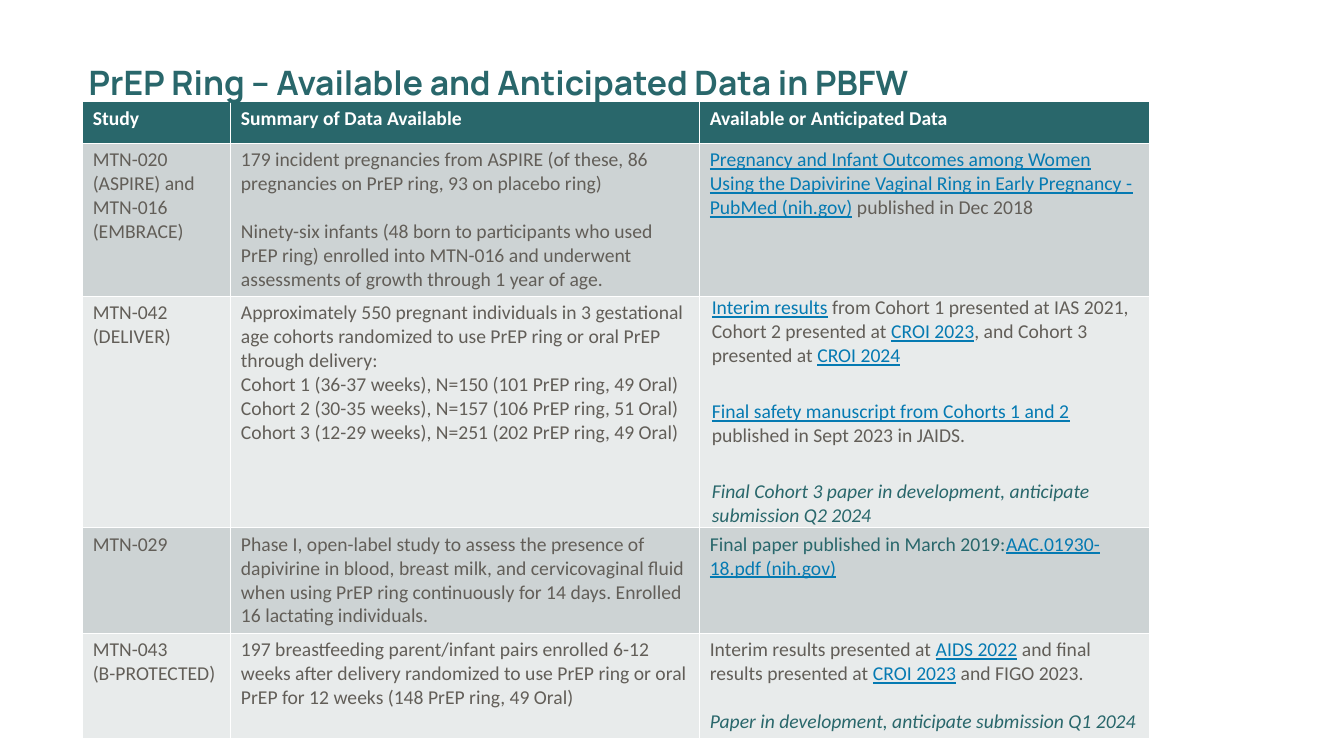
"""Build the slide on PrEP ring data in pregnant and breastfeeding women."""
import pptx
import pptx.util
import pptx.dml.color
import pptx.enum.text

TITLE = "PrEP Ring – Available and Anticipated Data in PBFW"
TEAL, GREY, BLUE, WHITE = "29676B", "625E58", "057AB2", "FFFFFF"
BANDS = ["CDD3D4", "E8EBEB"]
LINK = {"color": BLUE, "under": True}
NOTE = {"color": TEAL, "slant": True}
GAP, WIDE = 17, 23
WIDTH, HEIGHT = 13.33, 7.5
LEFT, TOP = 0.82, 1.01
COLS = [1.47, 4.65, 4.46]
ROWS = [0.41, 1.5, 2.27, 1.03, 1.03]

HEAD = ["Study", "Summary of Data Available", "Available or Anticipated Data"]

# Each cell is a list of paragraphs: space before, then its runs.
BODY = [
    [
        [(0, "MTN-020 (ASPIRE) and MTN-016 (EMBRACE)")],
        [(0, "179 incident pregnancies from ASPIRE (of these, 86 pregnancies "
             "on PrEP ring, 93 on placebo ring)"),
         (GAP, "Ninety-six infants (48 born to participants who used PrEP ring) "
               "enrolled into MTN-016 and underwent assessments of growth "
               "through 1 year of age.")],
        [(0, ("Pregnancy and Infant Outcomes among Women Using the Dapivirine "
              "Vaginal Ring in Early Pregnancy - PubMed (nih.gov)", LINK),
          " published in Dec 2018")],
    ],
    [
        [(0, "MTN-042 (DELIVER)")],
        [(0, "Approximately 550 pregnant individuals in 3 gestational age "
             "cohorts randomized to use PrEP ring or oral PrEP through delivery:"),
         (0, "Cohort 1 (36-37 weeks), N=150 (101 PrEP ring, 49 Oral)"),
         (0, "Cohort 2 (30-35 weeks), N=157 (106 PrEP ring, 51 Oral)"),
         (0, "Cohort 3 (12-29 weeks), N=251 (202 PrEP ring, 49 Oral)")],
        [(0, ("Interim results", LINK),
          " from Cohort 1 presented at IAS 2021, Cohort 2 presented at ",
          ("CROI 2023", LINK), ", and Cohort 3 presented at ",
          ("CROI 2024", LINK)),
         (WIDE, ("Final safety manuscript from Cohorts 1 and 2", LINK),
          " published in Sept 2023 in JAIDS."),
         (WIDE, ("Final Cohort 3 paper in development, anticipate submission "
                 "Q2 2024", NOTE))],
    ],
    [
        [(0, "MTN-029")],
        [(0, "Phase I, open-label study to assess the presence of dapivirine in "
             "blood, breast milk, and cervicovaginal fluid when using PrEP ring "
             "continuously for 14 days. Enrolled 16 lactating individuals.")],
        [(0, ("Final paper published in March 2019:", {"color": TEAL}),
          ("AAC.01930-18.pdf (nih.gov)", LINK))],
    ],
    [
        [(0, "MTN-043"), (0, "(B-PROTECTED)")],
        [(0, "197 breastfeeding parent/infant pairs enrolled 6-12 weeks after "
             "delivery randomized to use PrEP ring or oral PrEP for 12 weeks "
             "(148 PrEP ring, 49 Oral)")],
        [(0, "Interim results presented at ", ("AIDS 2022", LINK),
          " and final results presented at ", ("CROI 2023", LINK),
          " and FIGO 2023."),
         (GAP, ("Paper in development, anticipate submission Q1 2024", NOTE))],
    ],
]


def inch(size):
    return pptx.util.Inches(size)


def paint(form, code):
    if hasattr(form, "solid"):
        form.solid()
        form = form.fore_color
    form.rgb = pptx.dml.color.RGBColor.from_string(code)


def write(para, text, size=14, face="Calibri", color=GREY, bold=False,
          slant=False, under=False):
    run = para.add_run()
    run.text = text
    font = run.font
    font.size, font.name = pptx.util.Pt(size), face
    font.bold, font.italic, font.underline = bold, slant, under
    paint(font.color, color)


def fill(cell, paras, shade, **style):
    paint(cell.fill, shade)
    frame = cell.text_frame
    for i, (space, *runs) in enumerate(paras):
        para = frame.add_paragraph() if i else frame.paragraphs[0]
        if space:
            para.space_before = pptx.util.Pt(space)
        for run in runs:
            text, extra = (run, {}) if isinstance(run, str) else run
            write(para, text, **{**style, **extra})


def draw_table(slide):
    frame = slide.shapes.add_table(len(ROWS), len(COLS), inch(LEFT), inch(TOP),
                                   inch(sum(COLS)), inch(sum(ROWS)))
    table = frame.table
    for col, width in zip(table.columns, COLS):
        col.width = inch(width)
    for row, height in zip(table.rows, ROWS):
        row.height = inch(height)
    for c, text in enumerate(HEAD):
        fill(table.cell(0, c), [(0, text)], TEAL, color=WHITE, bold=True)
    for r, row in enumerate(BODY):
        for c, paras in enumerate(row):
            fill(table.cell(r + 1, c), paras, BANDS[r % 2])
    trial = table.cell(2, 2)
    trial.margin_left = trial.margin_right = inch(0.12)
    trial.margin_top = trial.margin_bottom = 0


def draw_title(slide):
    title = slide.shapes.title
    title.left, title.top = 0, inch(0.21)
    title.width, title.height = inch(11.5), inch(1.25)
    frame = title.text_frame
    frame.word_wrap = True
    frame.auto_size = pptx.enum.text.MSO_AUTO_SIZE.NONE
    frame.vertical_anchor = pptx.enum.text.MSO_ANCHOR.MIDDLE
    frame.margin_left, frame.margin_right = inch(0.88), inch(0.1)
    frame.margin_top = frame.margin_bottom = inch(0.05)
    para = frame.paragraphs[0]
    para.alignment = pptx.enum.text.PP_ALIGN.LEFT
    para.line_spacing = 0.9
    write(para, TITLE, size=24, face="Manrope", color=TEAL, bold=True)
    slide.shapes._spTree.append(title._element)


def main():
    deck = pptx.Presentation()
    deck.slide_width, deck.slide_height = inch(WIDTH), inch(HEIGHT)
    slide = deck.slides.add_slide(deck.slide_layouts[5])
    draw_table(slide)
    draw_title(slide)
    deck.save("out.pptx")


if __name__ == "__main__":
    main()
